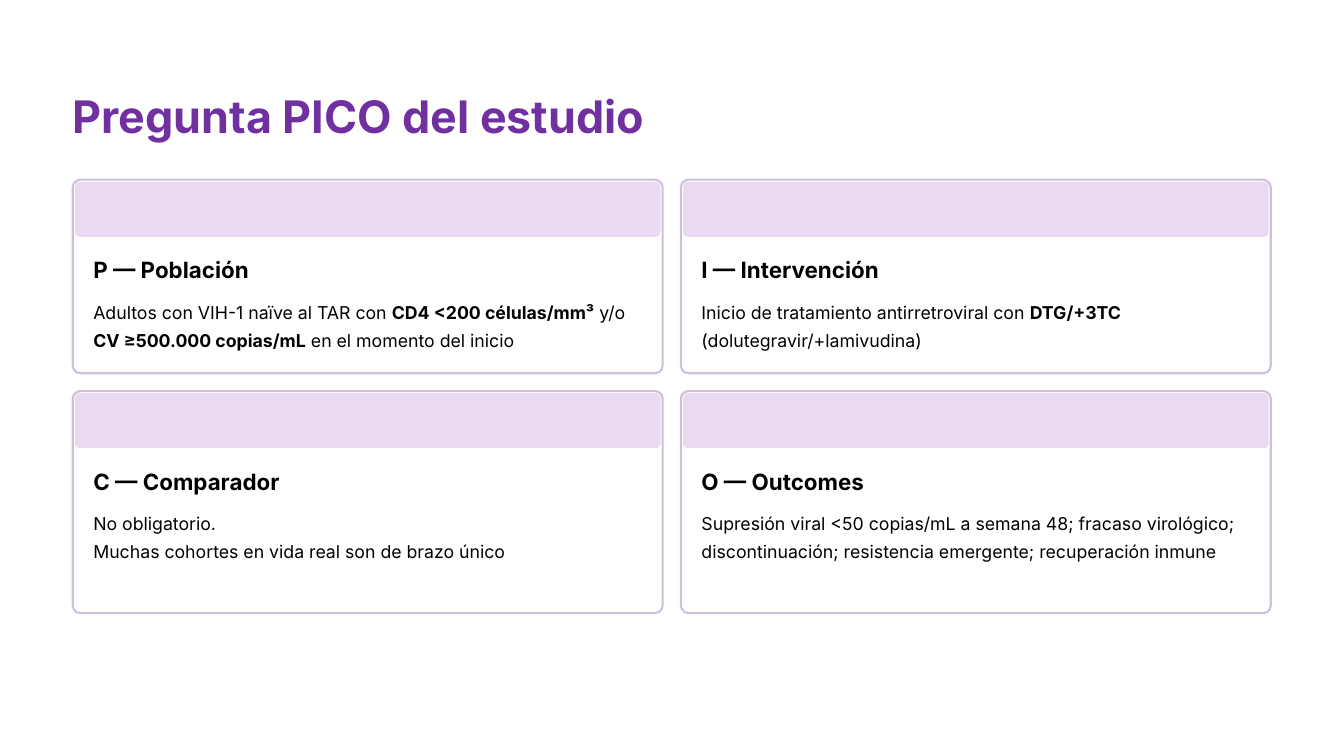
"""Builds the slide that sets out the PICO question of the study."""
from pptx import Presentation
from pptx.dml.color import RGBColor
from pptx.enum.shapes import MSO_SHAPE
from pptx.util import Pt


def colour(value):
    return RGBColor.from_string(value)


class PicoSlide:
    FONT = "Inter"
    PURPLE, LILAC, BORDER = "7030A0", "EADAF1", "D0C0D7"
    INK, PAPER = "000000", "FFFFFF"

    def __init__(self, slide):
        self.slide = slide

    def panel(self, left, top, width, height, radius, fill, line=None):
        panel = self.slide.shapes.add_shape(
            MSO_SHAPE.ROUNDED_RECTANGLE, Pt(left), Pt(top), Pt(width), Pt(height))
        panel.shadow.inherit = False
        panel.adjustments[0] = radius / height
        panel.fill.solid()
        panel.fill.fore_color.rgb = colour(fill)
        if line:
            panel.line.color.rgb = colour(line)
            panel.line.width = Pt(1.13)
        else:
            panel.line.fill.background()

    def text(self, left, top, width, height, paragraphs, size,
             ink=INK, bold=False, spacing=1.04):
        frame = self.slide.shapes.add_textbox(
            Pt(left), Pt(top), Pt(width), Pt(height)).text_frame
        frame.margin_left = frame.margin_right = 0
        frame.margin_top = frame.margin_bottom = 0
        frame.word_wrap = True
        for index, runs in enumerate(paragraphs):
            paragraph = frame.paragraphs[0] if index == 0 else frame.add_paragraph()
            paragraph.line_spacing = spacing
            font = paragraph.font
            font.name, font.size, font.bold = self.FONT, Pt(size), bold
            font.color.rgb = colour(ink)
            for position, words in enumerate(runs):
                run = paragraph.add_run()
                run.text = words
                if position % 2:
                    run.font.bold = True

    def card(self, left, top, height, heading, body):
        self.panel(left, top, 316, height, 4.1, self.PAPER, self.BORDER)
        self.panel(left + 1.1, top + 1.1, 313.8, 29.5, 2.8, self.LILAC)
        self.text(left + 11, top + 40.5, 158, 15, [[heading]], 12, bold=True)
        self.text(left + 11, top + 61.4, 294.5, 31, body, 9.5, spacing=1.33)


def main():
    presentation = Presentation()
    presentation.slide_width, presentation.slide_height = Pt(720), Pt(405)
    pico = PicoSlide(presentation.slides.add_slide(presentation.slide_layouts[6]))
    pico.text(39, 46.2, 348, 30, [["Pregunta PICO del estudio"]], 24,
              ink=pico.PURPLE, bold=True)

    # Odd-numbered runs of a body paragraph are bold.
    rows = [
        (96.3, 103.7, [
            ("P — Población", [[
                "Adultos con VIH-1 naïve al TAR con ", "CD4 <200 células/mm³",
                " y/o ", "CV ≥500.000 copias/mL", " en el momento del inicio"]]),
            ("I — Intervención", [[
                "Inicio de tratamiento antirretroviral con ", "DTG/+3TC",
                " (dolutegravir/+lamivudina)"]]),
        ]),
        (209.5, 119, [
            ("C — Comparador", [
                ["No obligatorio."],
                ["Muchas cohortes en vida real son de brazo único"]]),
            ("O — Outcomes", [[
                "Supresión viral <50 copias/mL a semana 48; fracaso virológico; "
                "discontinuación; resistencia emergente; recuperación inmune"]]),
        ]),
    ]
    for top, height, cards in rows:
        for column, (heading, body) in enumerate(cards):
            pico.card(39 + 325.8 * column, top, height, heading, body)
    presentation.save("out.pptx")


if __name__ == "__main__":
    main()
